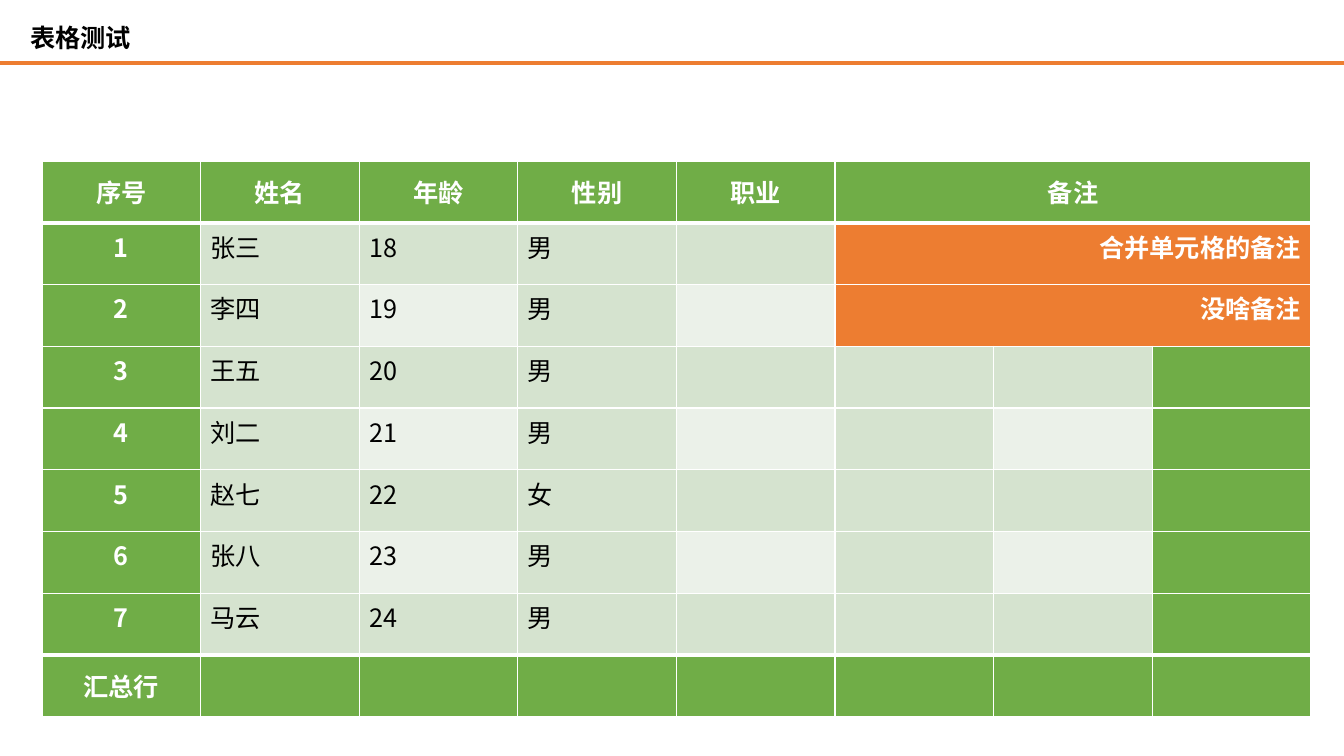
from lxml.etree import SubElement as Sub
from pptx import Presentation
from pptx.dml.color import RGBColor
from pptx.enum.text import MSO_ANCHOR as Anchor, MSO_AUTO_SIZE as Auto, PP_ALIGN as Align
from pptx.oxml.ns import qn
from pptx.util import Pt

PX = 914400 / 100.8
FONT = "Noto Sans CJK SC"
WHITE = RGBColor(0xFF, 0xFF, 0xFF)
BLACK = RGBColor(0, 0, 0)
GREEN = RGBColor(0x70, 0xAD, 0x47)
SAGE = RGBColor(0xD5, 0xE3, 0xCF)
PALE = RGBColor(0xEB, 0xF1, 0xE9)
ORANGE = RGBColor(0xED, 0x7D, 0x31)

ROWS = [
    ["序号", "姓名", "年龄", "性别", "职业", "备注"],
    ["1", "张三", "18", "男", "", "合并单元格的备注"],
    ["2", "李四", "19", "男", "", "没啥备注"],
    ["3", "王五", "20", "男"],
    ["4", "刘二", "21", "男"],
    ["5", "赵七", "22", "女"],
    ["6", "张八", "23", "男"],
    ["7", "马云", "24", "男"],
    ["汇总行"],
]
COLS, NOTE, LAST = 8, 5, len(ROWS) - 1


def px(n):
    return round(n * PX)


def write(para, text, align, color, bold):
    para.alignment = align
    run = para.add_run()
    run.text = text
    look = {"name": FONT, "size": Pt(18), "bold": bold}
    for key, val in look.items():
        setattr(run.font, key, val)
    run.font.color.rgb = color
    Sub(run.font._element, qn("a:ea"), typeface=FONT)


deck = Presentation()
deck.slide_width, deck.slide_height = px(1344), px(756)
slide = deck.slides.add_slide(deck.slide_layouts[5])

# Table
left, top, width, height = 42, 161, 1269, 556
frame = slide.shapes.add_table(len(ROWS), COLS, px(left), px(top), px(width), px(height))
table = frame.table
table.first_row = table.horz_banding = False
for col in table.columns:
    col.width = px(width / COLS)
for row in table.rows:
    row.height = px(height / len(ROWS))

for r, words in enumerate(ROWS):
    edge = r in (0, LAST)
    for c in range(COLS):
        cell = table.cell(r, c)
        sides = {
            "L": 1,
            "R": 1,
            "T": 3 if r in (1, LAST) else 1,
            "B": 3 if r in (0, LAST - 1) else 1,
        }
        props = cell._tc.get_or_add_tcPr()
        for side, size in sides.items():
            line = Sub(props, qn("a:ln" + side), w=str(Pt(size)))
            Sub(Sub(line, qn("a:solidFill")), qn("a:srgbClr"), val=str(WHITE))

        merged = r < 3 and c >= NOTE
        if merged and not edge:
            fill = ORANGE
        elif edge or c in (0, COLS - 1):
            fill = GREEN
        else:
            fill = PALE if r % 2 == 0 and c % 2 == 0 else SAGE
        cell.fill.solid()
        cell.fill.fore_color.rgb = fill
        cell.vertical_anchor = Anchor.MIDDLE if edge else Anchor.TOP

        if c < len(words) and words[c]:
            strong = fill in (GREEN, ORANGE)
            align = {GREEN: Align.CENTER, ORANGE: Align.RIGHT}.get(fill, Align.LEFT)
            write(cell.text_frame.paragraphs[0], words[c], align,
                  WHITE if strong else BLACK, strong)
    if r < 3:
        table.cell(r, NOTE).merge(table.cell(r, COLS - 1))

# Title and rule
title = slide.shapes.title
place = {"left": 20, "top": 17, "width": 122, "height": 40}
for key, val in place.items():
    setattr(title, key, px(val))
body = title.text_frame
form = {"word_wrap": False, "auto_size": Auto.SHAPE_TO_FIT_TEXT, "vertical_anchor": Anchor.TOP}
for key, val in form.items():
    setattr(body, key, val)
write(body.paragraphs[0], "表格测试", Align.LEFT, BLACK, True)

rule = slide.shapes.add_connector(1, 0, px(63), px(1344), px(63))
rule.line.color.rgb = ORANGE
rule.line.width = Pt(3)
Sub(rule._element.spPr, qn("a:effectLst"))

deck.save("out.pptx")
